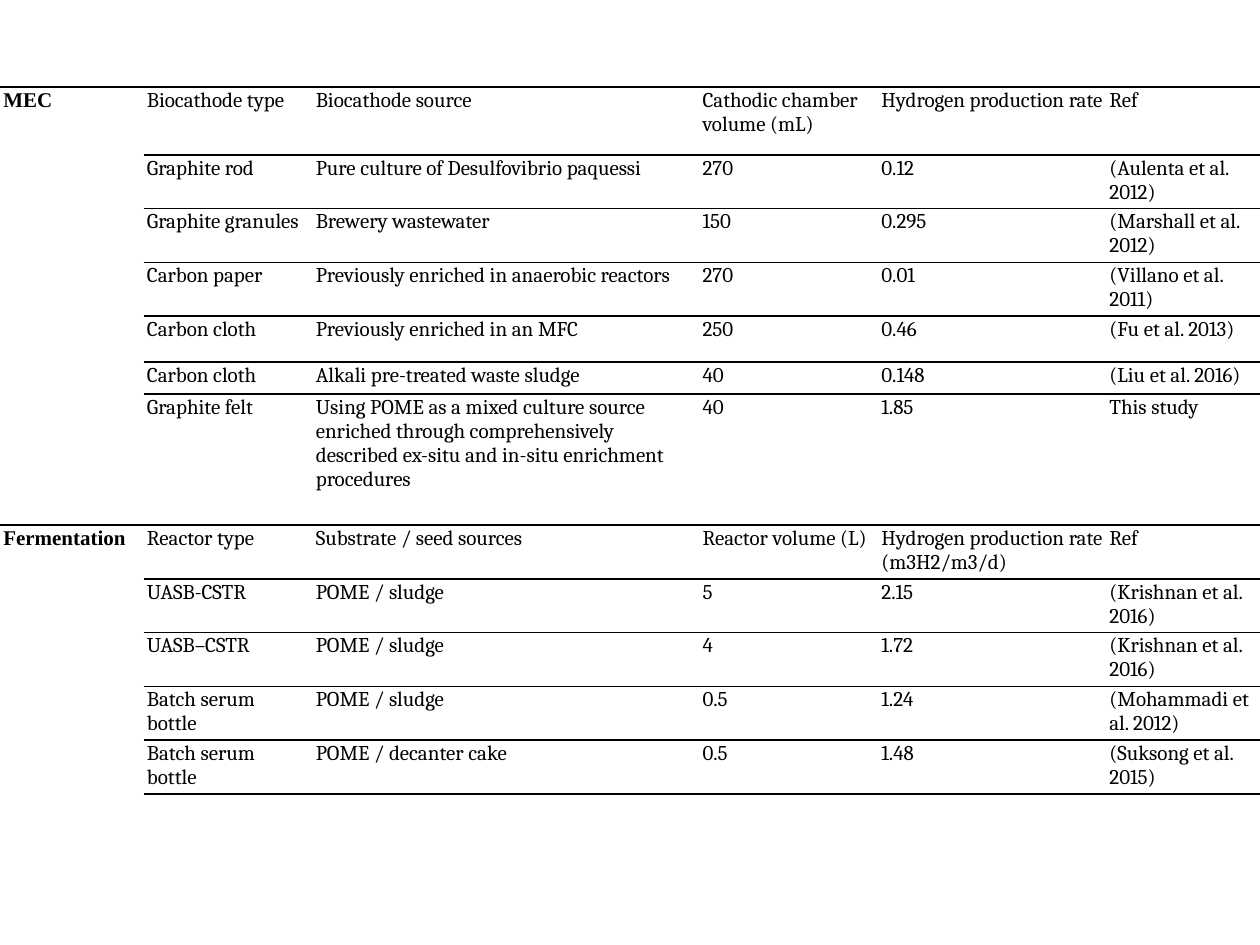
from lxml import etree
from pptx import Presentation
from pptx.dml.color import RGBColor
from pptx.oxml.ns import qn
from pptx.util import Pt

BLACK = RGBColor(0, 0, 0)
COLS = [82.1, 96.5, 221, 102.2, 130.3, 87.9]
LINE, TWO = 18.3, 30.7  # heights of one-line and two-line rows

# Each group: name, then rows of (height, texts); its first row is the heading.
GROUPS = [
    ("MEC", [
        (38.8, ["Biocathode type", "Biocathode source",
                "Cathodic chamber volume (mL)", "Hydrogen production rate", "Ref"]),
        (TWO, ["Graphite rod", "Pure culture of Desulfovibrio paquessi",
               "270", "0.12", "(Aulenta et al. 2012)"]),
        (TWO, ["Graphite granules", "Brewery wastewater",
               "150", "0.295", "(Marshall et al. 2012)"]),
        (TWO, ["Carbon paper", "Previously enriched in anaerobic reactors",
               "270", "0.01", "(Villano et al. 2011)"]),
        (26.3, ["Carbon cloth", "Previously enriched in an MFC",
                "250", "0.46", "(Fu et al. 2013)"]),
        (LINE, ["Carbon cloth", "Alkali pre-treated waste sludge",
                "40", "0.148", "(Liu et al. 2016)"]),
        (74.9, ["Graphite felt",
                "Using POME as a mixed culture source enriched through "
                "comprehensively described ex-situ and in-situ enrichment procedures",
                "40", "1.85", "This study"]),
    ]),
    ("Fermentation", [
        (TWO, ["Reactor type", "Substrate / seed sources", "Reactor volume (L)",
               "Hydrogen production rate (m3H2/m3/d)", "Ref"]),
        (TWO, ["UASB-CSTR", "POME / sludge", "5", "2.15", "(Krishnan et al. 2016)"]),
        (TWO, ["UASB–CSTR", "POME / sludge", "4", "1.72", "(Krishnan et al. 2016)"]),
        (TWO, ["Batch serum bottle", "POME / sludge",
               "0.5", "1.24", "(Mohammadi et al. 2012)"]),
        (TWO, ["Batch serum bottle", "POME / decanter cake",
               "0.5", "1.48", "(Suksong et al. 2015)"]),
    ]),
]


def add_line(parent, tag, width, color=None):
    """Append an a:ln-like element, with no fill when color is None."""
    line = etree.SubElement(parent, qn(tag), w=str(Pt(width)))
    if color is None:
        etree.SubElement(line, qn("a:noFill"))
    else:
        fill = etree.SubElement(line, qn("a:solidFill"))
        etree.SubElement(fill, qn("a:srgbClr"), val=str(color))


def style_cell(cell, top, bottom):
    """Set insets, clear the fill and rule the chosen edges."""
    cell.margin_left = cell.margin_right = Pt(1.9)
    cell.margin_top = cell.margin_bottom = Pt(0.7)
    props = cell._tc.get_or_add_tcPr()
    for tag, shown in (("a:lnL", False), ("a:lnR", False),
                       ("a:lnT", top), ("a:lnB", bottom)):
        add_line(props, tag, 1, BLACK if shown else None)
    cell.fill.background()


def write(cell, text, head=False):
    cell.text_frame.text = text
    para = cell.text_frame.paragraphs[0]
    para.space_before = para.space_after = Pt(1)
    run = para.runs[0]
    if not head:
        add_line(run._r.get_or_add_rPr(), "a:ln", 0.75, BLACK)
    font = run.font
    font.size = Pt(12)
    font.bold = head
    font.name = "Times New Roman" if head else "Cambria"
    font.color.rgb = BLACK


def fill_group(table, start, name, rows):
    last = len(rows) - 1
    for i, (height, texts) in enumerate(rows):
        row = start + i
        table.rows[row].height = Pt(height)
        style_cell(table.cell(row, 0), i == 0, i == last)
        for col, text in enumerate(texts, 1):
            cell = table.cell(row, col)
            style_cell(cell, True, True)
            write(cell, text)
    side = table.cell(start, 0)
    side.merge(table.cell(start + last, 0))
    write(side, name, head=True)


def add_rates(slide, left, top, width):
    heights = [height for _, rows in GROUPS for height, _ in rows]
    table = slide.shapes.add_table(len(heights), len(COLS), Pt(left), Pt(top),
                                   Pt(width), Pt(sum(heights))).table
    table.first_row = table.horz_banding = False
    for col, size in zip(table.columns, COLS):
        col.width = Pt(width * size / sum(COLS))
    start = 0
    for name, rows in GROUPS:
        fill_group(table, start, name, rows)
        start += len(rows)


def main():
    deck = Presentation()
    deck.slide_width, deck.slide_height = Pt(720), Pt(540)
    slide = deck.slides.add_slide(deck.slide_layouts[6])
    add_rates(slide, 0, 49.8, 720)
    deck.save("out.pptx")


if __name__ == "__main__":
    main()
